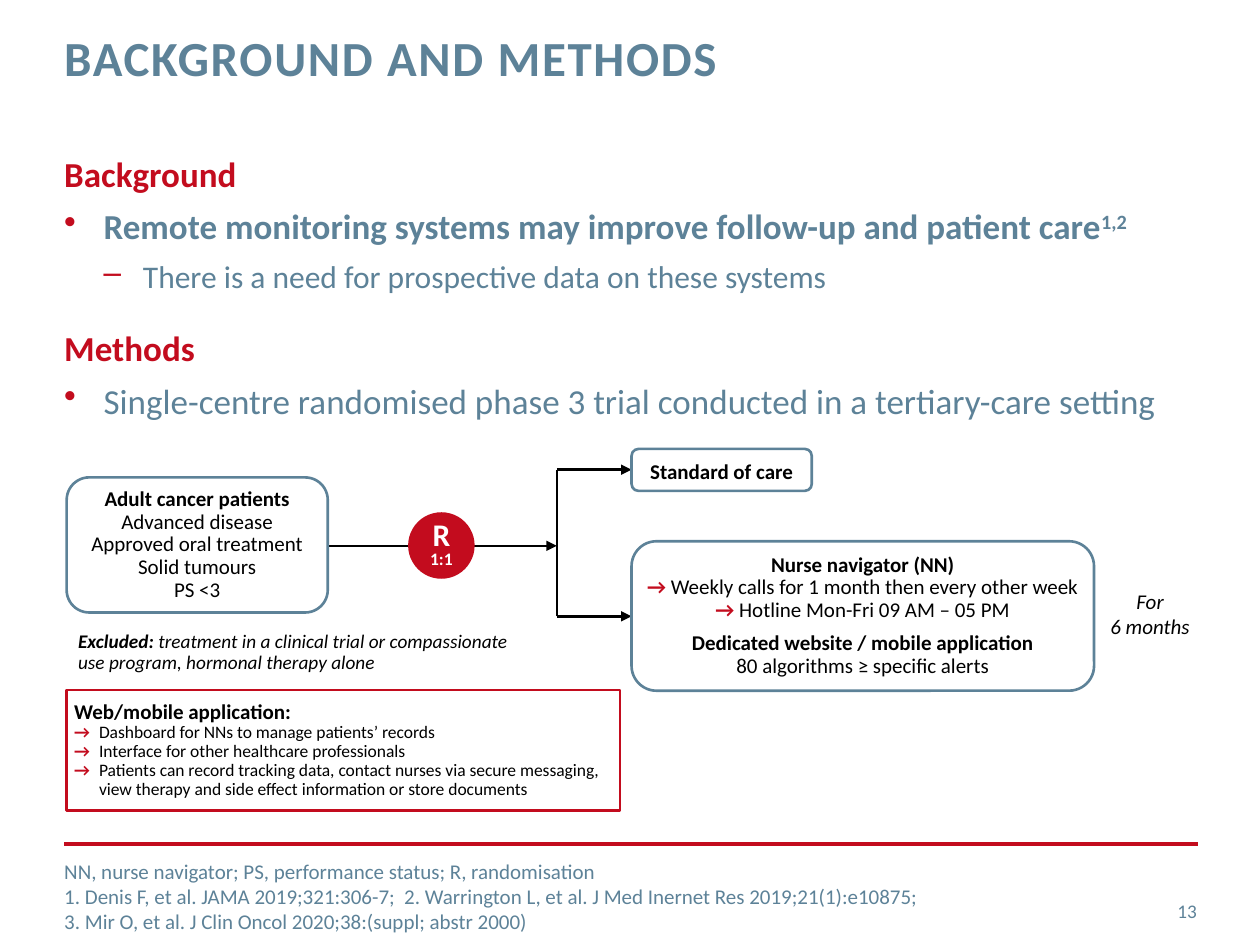
"""Build the background and methods slide of a remote monitoring trial."""
import pptx
import pptx.dml.color
import pptx.enum.shapes
import pptx.enum.text
import pptx.oxml.ns
import pptx.util
from lxml import etree

Pt = pptx.util.Pt
RED = pptx.dml.color.RGBColor(0xC3, 0x0C, 0x1E)
BLUE = pptx.dml.color.RGBColor(0x5D, 0x82, 0x98)
BLACK = pptx.dml.color.RGBColor(0, 0, 0)
WHITE = pptx.dml.color.RGBColor(255, 255, 255)
ALIGN = pptx.enum.text.PP_ALIGN
ANCHOR = pptx.enum.text.MSO_ANCHOR
KIND = pptx.enum.shapes.MSO_SHAPE


def sub(node, tag, **attrs):
    return etree.SubElement(node, pptx.oxml.ns.qn(tag), **attrs)


def add_run(para, text, size, color, style="", raised=False, spread=0):
    for row, part in enumerate(text.split("\n")):
        if row:
            para.add_line_break()
        run = para.add_run()
        run.text = part
        font = run.font
        font.name, font.size = "Calibri", Pt(size)
        font.bold, font.italic = "b" in style, "i" in style
        font.color.rgb = color
        props = run._r.get_or_add_rPr()
        if raised:
            props.set("baseline", "30000")
        if spread:
            props.set("spc", str(spread * 100))


def add_para(frame, runs, align=ALIGN.LEFT, space=None, before=0, indent=0, hang=0, level=0, mark=None):
    first = frame.paragraphs[0]
    para = frame.add_paragraph() if first.runs else first
    para.alignment, para.level = align, level
    if space:
        para.line_spacing = space
    if before:
        para.space_before = Pt(before)
    props = para._p.get_or_add_pPr()
    if indent:
        props.set("marL", str(Pt(indent)))
        props.set("indent", str(-Pt(hang)))
    if mark:
        sub(sub(props, "a:buClr"), "a:srgbClr", val=str(RED))
        sub(props, "a:buChar", char=mark)
    for run in runs:
        add_run(para, *run)


def set_frame(frame, anchor, pads=(0, 0, 0, 0), wrap=True):
    frame.word_wrap, frame.vertical_anchor = wrap, anchor
    frame.margin_left, frame.margin_top, frame.margin_right, frame.margin_bottom = map(Pt, pads)
    return frame


def add_text(slide, spot, anchor=ANCHOR.TOP, wrap=True):
    box = slide.shapes.add_textbox(*map(Pt, spot))
    return set_frame(box.text_frame, anchor, wrap=wrap)


def add_box(slide, kind, spot, fill, line=None, pads=(0, 3, 0, 3)):
    box = slide.shapes.add_shape(kind, *map(Pt, spot))
    box.shadow.inherit = False
    box.fill.solid()
    box.fill.fore_color.rgb = fill
    if line is None:
        box.line.fill.background()
    else:
        box.line.color.rgb = line
        box.line.width = Pt(1.5)
    return set_frame(box.text_frame, ANCHOR.MIDDLE, pads)


def add_line(slide, ends, color=BLACK, width=1.5, arrow=False):
    line = slide.shapes.add_connector(pptx.enum.shapes.MSO_CONNECTOR.STRAIGHT, *map(Pt, ends))
    line.line.color.rgb = color
    line.line.width = Pt(width)
    if arrow:
        sub(line.line._get_or_add_ln(), "a:tailEnd", type="triangle")
    sub(line._element.spPr, "a:effectLst")


def add_body(slide):
    title = add_text(slide, (36.7, 19.4, 516, 63))
    add_para(title, [("BACKGROUND AND METHODS", 28, BLUE, "b", False, 1)], space=Pt(30))
    body = add_text(slide, (36.7, 87.1, 647.5, 163.5))
    add_para(body, [("Background", 20, RED, "b")])
    add_para(body, [("Remote monitoring systems may improve follow-up and patient care", 20, BLUE, "b"),
                    ("1,2", 20, BLUE, "b", True)], before=6, indent=22.5, hang=22.5, mark="•")
    add_para(body, [("There is a need for prospective data on these systems", 18, BLUE)],
             before=6, indent=45, hang=22.5, level=1, mark="–")
    add_para(body, [("Methods", 20, RED, "b")], before=18)
    add_para(body, [("Single-centre randomised phase 3 trial conducted in a tertiary-care setting", 20, BLUE)],
             before=6, indent=22.5, hang=22.5, mark="•")


def add_foot(slide):
    add_line(slide, (36.7, 482.4, 684.7, 482.4), RED, 2)
    page = add_text(slide, (638, 506, 46, 29), ANCHOR.MIDDLE)
    add_para(page, [("13", 11, BLUE)], ALIGN.RIGHT)
    notes = add_text(slide, (36.7, 497.5, 502, 29), ANCHOR.MIDDLE)
    for text in ("NN, nurse navigator; PS, performance status; R, randomisation",
                 "1. Denis F, et al. JAMA 2019;321:306-7;  2. Warrington L, et al. "
                 "J Med Inernet Res 2019;21(1):e10875; \n"
                 "3. Mir O, et al. J Clin Oncol 2020;38:(suppl; abstr 2000)"):
        add_para(notes, [(text, 12, BLUE)])


def add_flow(slide):
    fork, top, mid, low = 318.2, 268.4, 311.9, 352.2
    for row in (top, low):
        add_line(slide, (fork, row, 360.9, row), arrow=True)
    add_line(slide, (fork, low, fork, top))
    add_line(slide, (185, mid, fork, mid), arrow=True)

    dot = add_box(slide, KIND.OVAL, (233.2, 292.7, 38, 38), RED, pads=(0, 0, 0, 0))
    for text, size in (("R", 18), ("1:1", 10)):
        add_para(dot, [(text, size, WHITE, "b")], ALIGN.CENTER, 0.8)

    group = add_box(slide, KIND.ROUNDED_RECTANGLE, (38.1, 272.8, 149.2, 77.2), WHITE, BLUE)
    add_para(group, [("Adult cancer patients", 12, BLACK, "b")], ALIGN.CENTER, 0.9)
    add_para(group, [("Advanced disease\nApproved oral treatment\nSolid tumours\nPS <3", 12, BLACK)],
             ALIGN.CENTER, 0.9)

    care = add_box(slide, KIND.ROUNDED_RECTANGLE, (360.9, 256.5, 103, 24), WHITE, BLUE, (0, 6, 0, 3))
    add_para(care, [("Standard of care", 12, BLACK, "b")], ALIGN.CENTER, 0.9)

    nurse = add_box(slide, KIND.ROUNDED_RECTANGLE, (360.9, 309.3, 264.3, 85.4), WHITE, BLUE)
    add_para(nurse, [("Nurse navigator (NN)", 12, BLACK, "b")], ALIGN.CENTER, 0.9)
    for text in ("Weekly calls for 1 month then every other week", "Hotline Mon-Fri 09 AM – 05 PM"):
        add_para(nurse, [("→ ", 12, RED, "b"), (text, 12, BLACK)], ALIGN.CENTER, 0.9)
    add_para(nurse, [("Dedicated website / mobile application", 12, BLACK, "b")], ALIGN.CENTER, 0.9, 6)
    add_para(nurse, [("80 algorithms ≥ specific alerts", 12, BLACK)], ALIGN.CENTER, 0.9)

    term = add_text(slide, (634.5, 336.2, 45.4, 29), wrap=False)
    add_para(term, [("For\n6 months", 12, BLACK, "i")], ALIGN.CENTER)


def add_notes(slide):
    pads = (4.3, 3, 0, 3)
    out = add_box(slide, KIND.RECTANGLE, (40.3, 355, 265.7, 36), WHITE, pads=pads)
    add_para(out, [("Excluded: ", 11, BLACK, "bi"),
                   ("treatment in a clinical trial or compassionate \nuse program, hormonal therapy alone",
                    11, BLACK, "i")], space=0.9)
    app = add_box(slide, KIND.RECTANGLE, (38.1, 394.4, 316.3, 68.7), WHITE, RED, pads)
    add_para(app, [("Web/mobile application:", 12, BLACK, "b")], space=0.9)
    for text in ("Dashboard for NNs to manage patients’ records",
                 "Interface for other healthcare professionals",
                 "Patients can record tracking data, contact nurses via secure messaging, "
                 "view therapy and side effect information or store documents"):
        add_para(app, [("→ \t", 10, RED, "b"), (text, 10, BLACK)], space=0.9, indent=14.2, hang=14.2)


def main():
    deck = pptx.Presentation()
    deck.slide_width, deck.slide_height = Pt(720), Pt(540)
    slide = deck.slides.add_slide(deck.slide_layouts[6])
    add_body(slide)
    add_foot(slide)
    add_flow(slide)
    add_notes(slide)
    deck.save("out.pptx")


if __name__ == "__main__":
    main()
